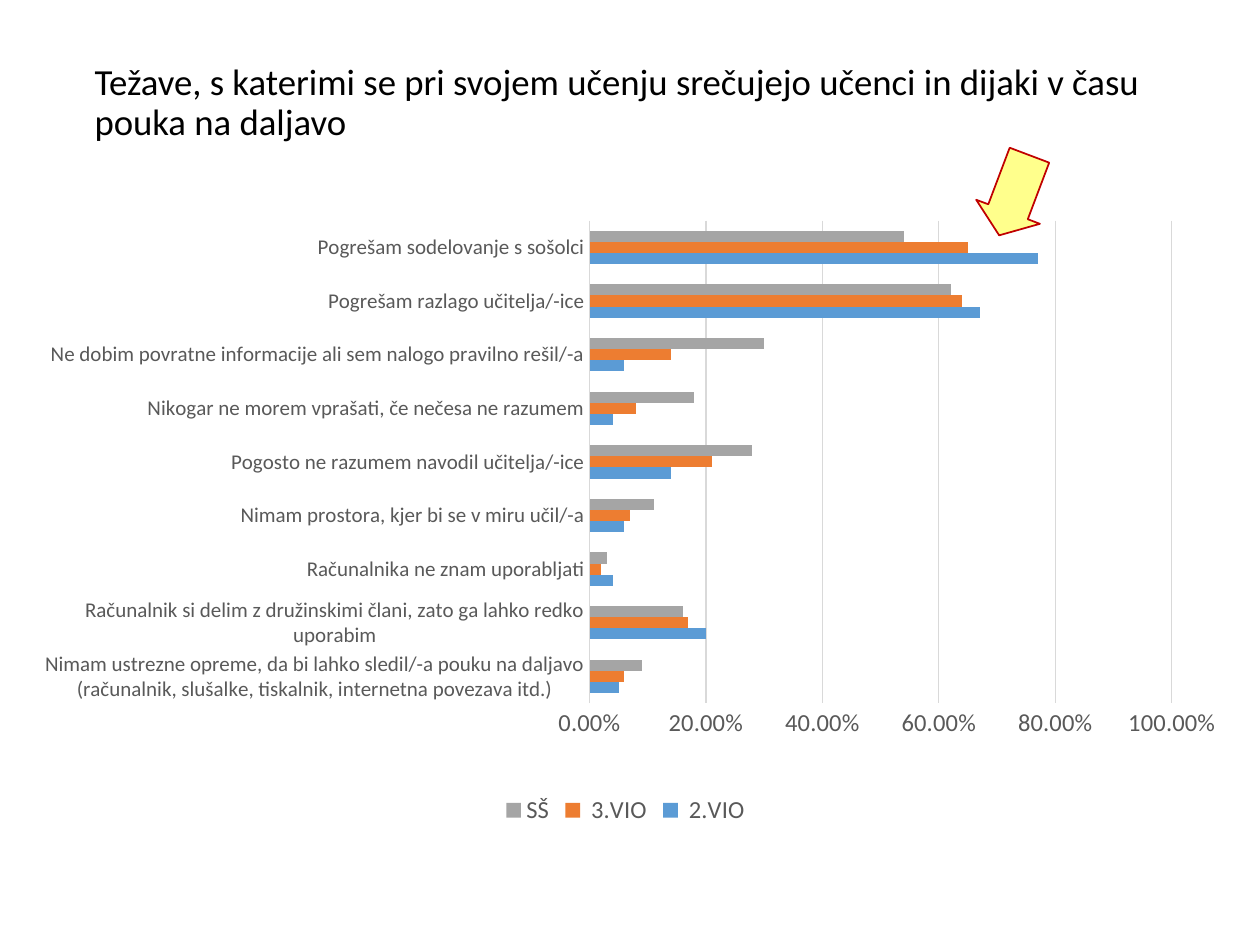
from lxml import etree
from pptx import Presentation, util as u
from pptx.chart.data import CategoryChartData
from pptx.dml.color import RGBColor
from pptx.enum import chart as ch, shapes, text
from pptx.oxml import parse_xml
from pptx.oxml.ns import nsdecls, qn

TITLE = "Težave, s katerimi se pri svojem učenju srečujejo učenci in dijaki v času pouka na daljavo"
SERIES = [(" 2.VIO", "blue"), (" 3.VIO", "orange"), ("SŠ", "gray")]
PROBLEMS = [  # category, then one share for each series
    ("Nimam ustrezne opreme, da bi lahko sledil/-a pouku na daljavo "
     "(računalnik, slušalke, tiskalnik, internetna povezava itd.)", 0.05, 0.06, 0.09),
    ("Računalnik si delim z družinskimi člani, zato ga lahko redko uporabim", 0.20, 0.17, 0.16),
    ("Računalnika ne znam uporabljati", 0.04, 0.02, 0.03),
    ("Nimam prostora, kjer bi se v miru učil/-a", 0.06, 0.07, 0.11),
    ("Pogosto ne razumem navodil učitelja/-ice", 0.14, 0.21, 0.28),
    ("Nikogar ne morem vprašati, če nečesa ne razumem", 0.04, 0.08, 0.18),
    ("Ne dobim povratne informacije ali sem nalogo pravilno rešil/-a", 0.06, 0.14, 0.30),
    ("Pogrešam razlago učitelja/-ice", 0.67, 0.64, 0.62),
    ("Pogrešam sodelovanje s sošolci", 0.77, 0.65, 0.54),
]
COLORS = {"black": "000000", "text": "595959", "grid": "D9D9D9", "blue": "5B9BD5",
          "orange": "ED7D31", "gray": "A5A5A5", "yellow": "FFFF00", "red": "C00000"}
PLACES = {"title": (0.65, 0.1, 8.62, 1.45), "chart": (0.2, 1.55, 9.53, 5.04),
          "arrow": (7.78, 1.21, 0.54, 0.68)}
PLOT = {"x": 0.47, "y": 0.04, "w": 0.485, "h": 0.76}  # shares of the chart


def color(name):
    return RGBColor.from_string(COLORS[name])


def place(name):
    return [u.Inches(length) for length in PLACES[name]]


def set_font(font, size, name):
    for key, value in {"size": u.Pt(size), "name": "Calibri", "bold": False}.items():
        setattr(font, key, value)
    font.color.rgb = color(name)


def set_line(line, name, width):
    line.color.rgb = color(name)
    line.width = u.Pt(width)


def add_title(slide):
    title = slide.shapes.title
    title.left, title.top, title.width, title.height = place("title")
    frame = title.text_frame
    for key, value in {"text": TITLE, "word_wrap": True, "auto_size": text.MSO_AUTO_SIZE.NONE,
                       "vertical_anchor": text.MSO_ANCHOR.MIDDLE}.items():
        setattr(frame, key, value)
    para = frame.paragraphs[0]
    para.alignment, para.line_spacing = text.PP_ALIGN.LEFT, 0.9
    set_font(para.runs[0].font, 21, "black")


def fix_plot_area(chart):
    """Pin the inner plot area to the shares in PLOT."""
    area = chart._chartSpace.chart.plotArea
    for old in area.findall(qn("c:layout")):
        area.remove(old)
    modes = "".join(f'<c:{axis}Mode val="edge"/>' for axis in "xy")
    sizes = "".join(f'<c:{key} val="{share}"/>' for key, share in PLOT.items())
    area.insert(0, parse_xml(
        f'<c:layout {nsdecls("c")}><c:manualLayout><c:layoutTarget val="inner"/>'
        f'{modes}{sizes}</c:manualLayout></c:layout>'))


def add_problem_chart(slide):
    names, *columns = zip(*PROBLEMS)
    data = CategoryChartData(number_format="0.00%")
    data.categories = names
    for (name, _), shares in zip(SERIES, columns):
        data.add_series(name, shares)
    chart = slide.shapes.add_chart(ch.XL_CHART_TYPE.BAR_CLUSTERED, *place("chart"), data).chart
    set_font(chart.font, 14, "black")
    chart.has_title = False
    chart.has_legend = True
    chart.legend.position = ch.XL_LEGEND_POSITION.BOTTOM
    chart.legend.include_in_layout = False
    set_font(chart.legend.font, 14, "text")

    plot = chart.plots[0]
    plot.gap_width, plot.overlap, plot.vary_by_categories = 182, 0, False
    for series, (_, name) in zip(plot.series, SERIES):
        series.format.fill.solid()
        series.format.fill.fore_color.rgb = color(name)

    for axis, size in ((chart.category_axis, 12), (chart.value_axis, 14)):
        axis.major_tick_mark = axis.minor_tick_mark = ch.XL_TICK_MARK.NONE
        set_font(axis.tick_labels.font, size, "text")
    set_line(chart.category_axis.format.line, "grid", 0.75)
    values = chart.value_axis
    values.minimum_scale, values.maximum_scale, values.major_unit = 0, 1, 0.2
    values.tick_labels.number_format = "0.00%"
    values.tick_labels.number_format_is_linked = False
    values.format.line.fill.background()
    values.has_major_gridlines = True
    set_line(values.major_gridlines.format.line, "grid", 0.75)
    fix_plot_area(chart)


def add_arrow(slide):
    arrow = slide.shapes.add_shape(shapes.MSO_SHAPE.DOWN_ARROW, *place("arrow"))
    arrow.shadow.inherit = False
    arrow.rotation = 20.7
    arrow.adjustments[0], arrow.adjustments[1] = 0.62, 0.37
    arrow.fill.solid()
    arrow.fill.fore_color.rgb = color("yellow")
    tint = arrow.fill._xPr.find(qn("a:solidFill"))[0]
    etree.SubElement(tint, qn("a:alpha"), val="45000")
    set_line(arrow.line, "red", 1)


def main():
    deck = Presentation()
    deck.slide_width, deck.slide_height = u.Inches(10), u.Inches(7.5)
    slide = deck.slides.add_slide(deck.slide_layouts.get_by_name("Title Only"))
    add_title(slide)
    add_problem_chart(slide)
    add_arrow(slide)
    deck.save("out.pptx")


if __name__ == "__main__":
    main()
